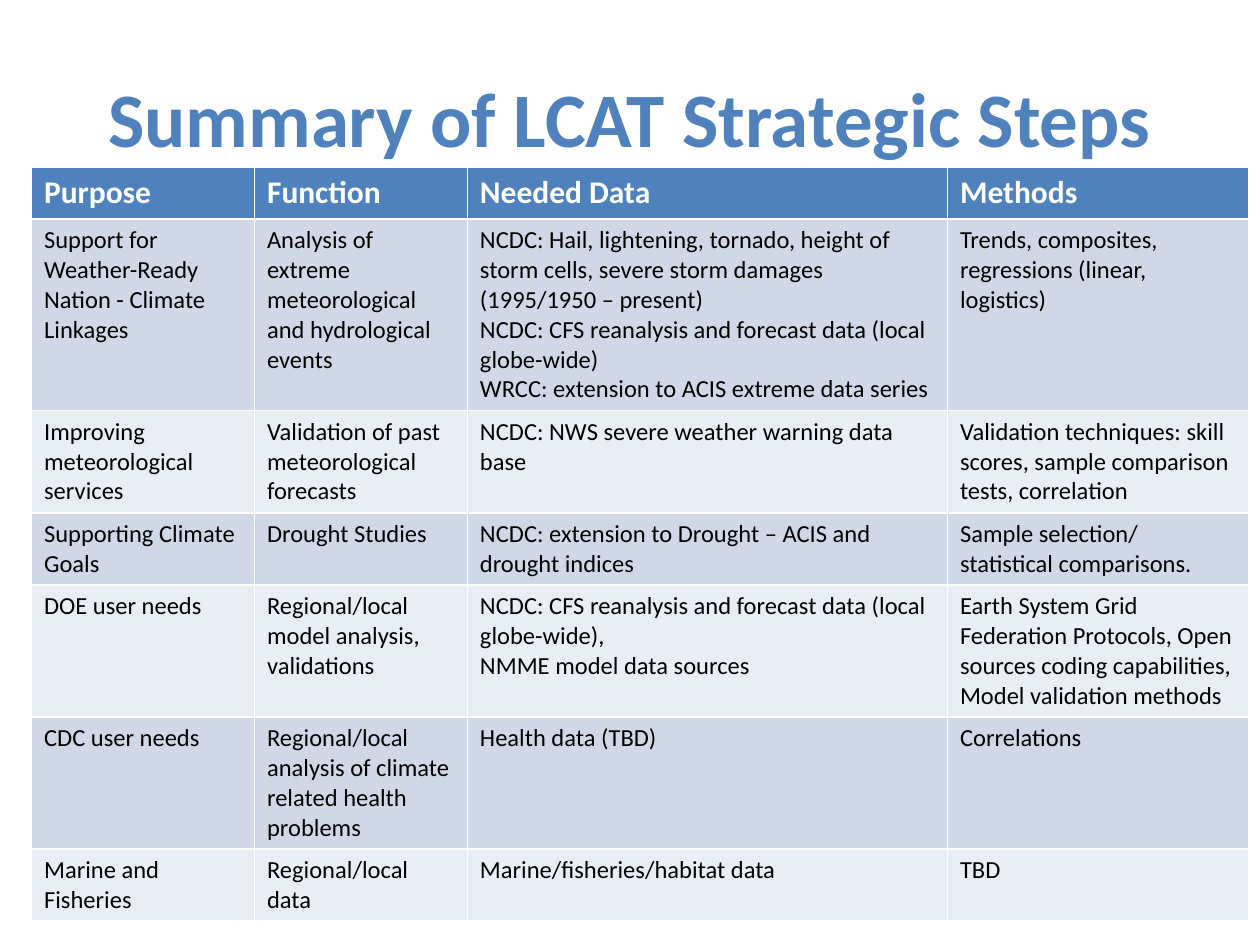
from dataclasses import dataclass

from pptx import Presentation
from pptx.dml.color import RGBColor
from pptx.enum import text
from pptx.util import Inches, Pt

FONT = "Calibri"
BLUE = "4F81BD"
WHITE = "FFFFFF"
BLACK = "000000"
BANDS = ("D0D8E8", "E9EDF4")
COLUMN_WIDTHS = (1.77, 1.69, 3.81, 2.39)
ROW_HEIGHT = 0.41


@dataclass(frozen=True)
class TextStyle:
    size: int
    color: str
    bold: bool = False


@dataclass(frozen=True)
class Step:
    purpose: str
    function: str
    data: tuple[str, ...]
    methods: tuple[str, ...]

    def cells(self) -> list[tuple[str, ...]]:
        return [(self.purpose,), (self.function,), self.data, self.methods]


TITLE_STYLE = TextStyle(44, BLUE, True)
HEADER_STYLE = TextStyle(18, WHITE, True)
BODY_STYLE = TextStyle(14, BLACK)

HEADER = Step("Purpose", "Function", ("Needed Data",), ("Methods",))
STEPS = [
    Step(
        "Support for Weather-Ready Nation - Climate Linkages",
        "Analysis of extreme meteorological and hydrological events",
        (
            "NCDC: Hail, lightening, tornado, height of storm cells, "
            "severe storm damages (1995/1950 – present)",
            "NCDC: CFS reanalysis and forecast data (local globe-wide)",
            "WRCC: extension to ACIS extreme data series",
        ),
        ("Trends, composites, regressions (linear, logistics)",),
    ),
    Step(
        "Improving meteorological services",
        "Validation of past meteorological forecasts",
        ("NCDC: NWS severe weather warning data base",),
        ("Validation techniques: skill scores, sample comparison tests, correlation",),
    ),
    Step(
        "Supporting Climate Goals",
        "Drought Studies",
        ("NCDC: extension to Drought – ACIS and drought indices",),
        ("Sample selection/ statistical comparisons.",),
    ),
    Step(
        "DOE user needs",
        "Regional/local model analysis, validations",
        (
            "NCDC: CFS reanalysis and forecast data (local globe-wide),",
            "NMME model data sources",
        ),
        (
            "Earth System Grid Federation Protocols, Open sources coding capabilities,",
            "Model validation methods",
        ),
    ),
    Step(
        "CDC user needs",
        "Regional/local analysis of climate related health problems",
        ("Health data (TBD)",),
        ("Correlations",),
    ),
    Step(
        "Marine and Fisheries",
        "Regional/local data",
        ("Marine/fisheries/habitat data",),
        ("TBD",),
    ),
]


def color(value: str) -> RGBColor:
    return RGBColor.from_string(value)


def write(frame, lines: tuple[str, ...], style: TextStyle, alignment) -> None:
    for index, line in enumerate(lines):
        paragraph = frame.add_paragraph() if index else frame.paragraphs[0]
        paragraph.alignment = alignment
        run = paragraph.add_run()
        run.text = line
        run.font.name = FONT
        run.font.size = Pt(style.size)
        run.font.bold = style.bold
        run.font.color.rgb = color(style.color)


def add_title(slide, title: str) -> None:
    shape = slide.shapes.title
    shape.left, shape.top = Inches(0.5), Inches(0.3)
    shape.width, shape.height = Inches(9), Inches(1.25)
    shape.text_frame.vertical_anchor = text.MSO_ANCHOR.MIDDLE
    write(shape.text_frame, (title,), TITLE_STYLE, text.PP_ALIGN.CENTER)


def fill_row(row, step: Step, fill: str, style: TextStyle) -> None:
    for cell, lines in zip(row.cells, step.cells()):
        cell.fill.solid()
        cell.fill.fore_color.rgb = color(fill)
        write(cell.text_frame, lines, style, text.PP_ALIGN.LEFT)


def add_steps_table(slide) -> None:
    row_count = len(STEPS) + 1
    table = slide.shapes.add_table(
        row_count, len(COLUMN_WIDTHS), Inches(0.25), Inches(1.33),
        Inches(sum(COLUMN_WIDTHS)), Inches(ROW_HEIGHT * row_count),
    ).table
    for column, width in zip(table.columns, COLUMN_WIDTHS):
        column.width = Inches(width)
    for row in table.rows:
        row.height = Inches(ROW_HEIGHT)
    fill_row(table.rows[0], HEADER, BLUE, HEADER_STYLE)
    for index, step in enumerate(STEPS):
        fill_row(table.rows[index + 1], step, BANDS[index % 2], BODY_STYLE)


def main() -> None:
    presentation = Presentation()
    presentation.slide_width = Inches(10)
    presentation.slide_height = Inches(7.5)
    slide = presentation.slides.add_slide(presentation.slide_layouts[5])
    add_title(slide, "Summary of LCAT Strategic Steps")
    add_steps_table(slide)
    presentation.save("out.pptx")


if __name__ == "__main__":
    main()
